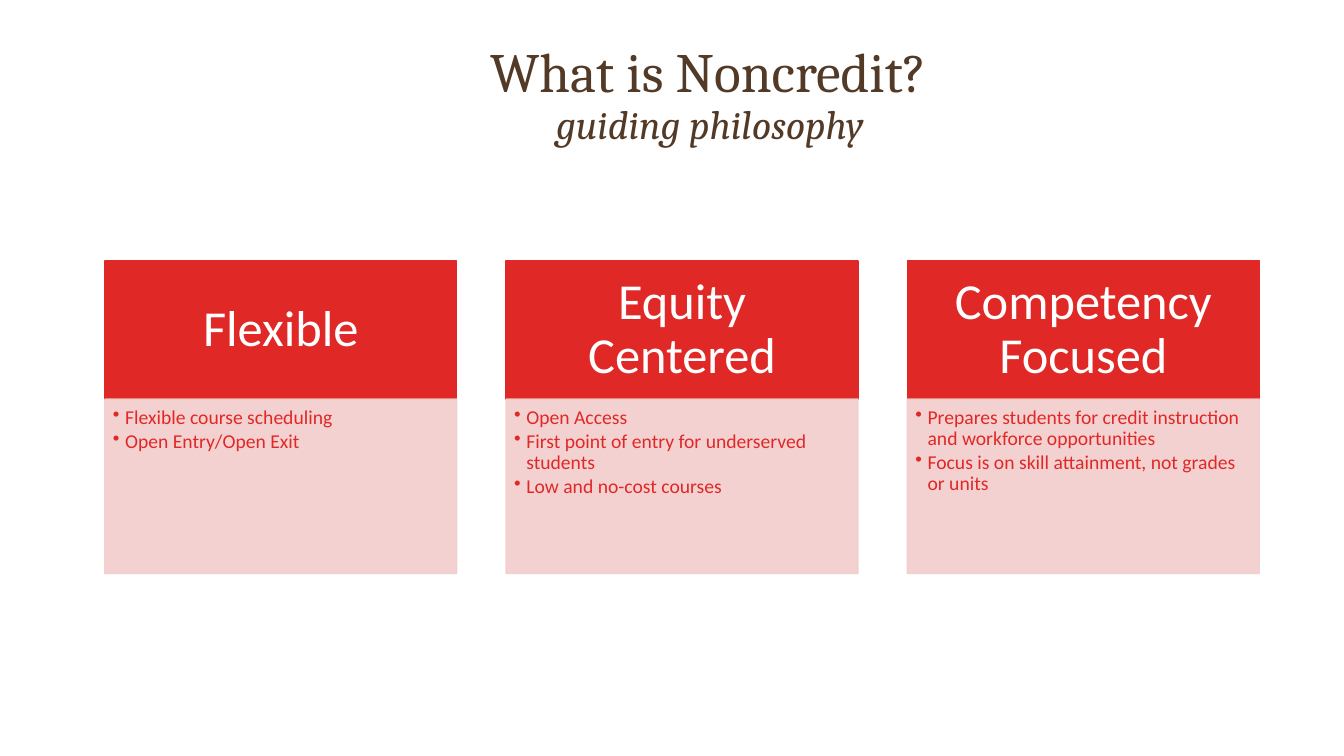
"""Build the noncredit guiding philosophy slide with three titled cards."""
from copy import deepcopy
from dataclasses import dataclass

from lxml.etree import SubElement
from pptx import Presentation
from pptx.dml.color import RGBColor
from pptx.enum.shapes import MSO_SHAPE
from pptx.enum.text import MSO_ANCHOR as ANCHOR, MSO_AUTO_SIZE as AUTO, PP_ALIGN as ALIGN
from pptx.oxml.ns import qn
from pptx.util import Inches, Pt

RED, PINK, BROWN, WHITE = "E02826", "F3CDCD", "533A27", "FFFFFF"
LEFT, TOP, WIDTH, PITCH = 1.04, 2.59, 3.49, 3.98
HEAD_H, BODY_H = 1.37, 1.73


@dataclass
class Card:
    heading: str
    points: list[str]


CARDS = [
    Card("Flexible", ["Flexible course scheduling", "Open Entry/Open Exit"]),
    Card("Equity Centered", ["Open Access",
                             "First point of entry for underserved students",
                             "Low and no-cost courses"]),
    Card("Competency Focused", [
        "Prepares students for credit instruction and workforce opportunities",
        "Focus is on skill attainment, not grades or units"]),
]


def rgb(value: str) -> RGBColor:
    return RGBColor.from_string(value)


def set_attrs(obj, **values) -> None:
    for name, value in values.items():
        setattr(obj, name, value)


def set_font(r, color: str, **values) -> None:
    set_attrs(r.font, **values)
    r.font.color.rgb = rgb(color)


def set_frame(tf, anchor, margins: tuple[float, ...]) -> None:
    sides = ("left", "top", "right", "bottom")
    set_attrs(tf, word_wrap=True, auto_size=AUTO.NONE, vertical_anchor=anchor,
              **{f"margin_{side}": Inches(m) for side, m in zip(sides, margins)})


def add_box(slide, x: float, y: float, h: float, color: str, alpha: int = 100):
    sp = slide.shapes.add_shape(MSO_SHAPE.RECTANGLE, Inches(x), Inches(y),
                                Inches(WIDTH), Inches(h))
    sp.shadow.inherit = False
    sp.fill.solid()
    sp.line.width = Pt(1)
    for fill in (sp.fill, sp.line.fill):
        fill.solid()
        fill.fore_color.rgb = rgb(color)
    if alpha < 100:
        for clr in sp._element.spPr.iter(qn("a:srgbClr")):
            SubElement(clr, qn("a:alpha"), val=str(alpha * 1000))
    return sp


def add_bullet(p) -> None:
    pPr = p._p.get_or_add_pPr()
    pPr.set("marL", str(Inches(0.12)))
    pPr.set("indent", str(Inches(-0.12)))
    SubElement(pPr, qn("a:buChar"), char="•")


def add_card(slide, card: Card, x: float) -> None:
    tf = add_box(slide, x, TOP, HEAD_H, RED).text_frame
    set_frame(tf, ANCHOR.MIDDLE, (0.28, 0.16, 0.28, 0.16))
    p = tf.paragraphs[0]
    p.text = card.heading
    set_attrs(p, alignment=ALIGN.CENTER, line_spacing=0.9)
    set_font(p.runs[0], WHITE, name="Calibri", size=Pt(36))

    tf = add_box(slide, x, TOP + HEAD_H, BODY_H, PINK, 90).text_frame
    set_frame(tf, ANCHOR.TOP, (0.08, 0.08, 0.11, 0.12))
    tf.text = "\n".join(card.points)
    for p in tf.paragraphs:
        set_attrs(p, alignment=ALIGN.LEFT, line_spacing=0.9, space_after=Pt(2.1))
        add_bullet(p)
        set_font(p.runs[0], RED, name="Calibri", size=Pt(14))


def add_title(slide) -> None:
    sp = slide.shapes.title
    set_attrs(sp, left=Inches(1.68), top=Inches(0.4), width=Inches(10.81), height=Inches(1.12))
    set_frame(sp.text_frame, ANCHOR.BOTTOM, (0.1, 0.05, 0.1, 0.05))
    p = sp.text_frame.paragraphs[0]
    p.text = "What is Noncredit? \vguiding philosophy "
    set_attrs(p, alignment=ALIGN.CENTER, line_spacing=0.9)
    for r, size, italic in zip(p.runs, (39.6, 28.8), (False, True)):
        set_font(r, BROWN, name="Cambria", size=Pt(size), italic=italic)
    p._p.find(qn("a:br")).append(deepcopy(p.runs[0]._r.rPr))


def main() -> None:
    prs = Presentation()
    set_attrs(prs, slide_width=Inches(13.33), slide_height=Inches(7.5))
    slide = prs.slides.add_slide(prs.slide_layouts[5])
    add_title(slide)
    for i, card in enumerate(CARDS):
        add_card(slide, card, LEFT + i * PITCH)
    prs.save("out.pptx")


if __name__ == "__main__":
    main()
